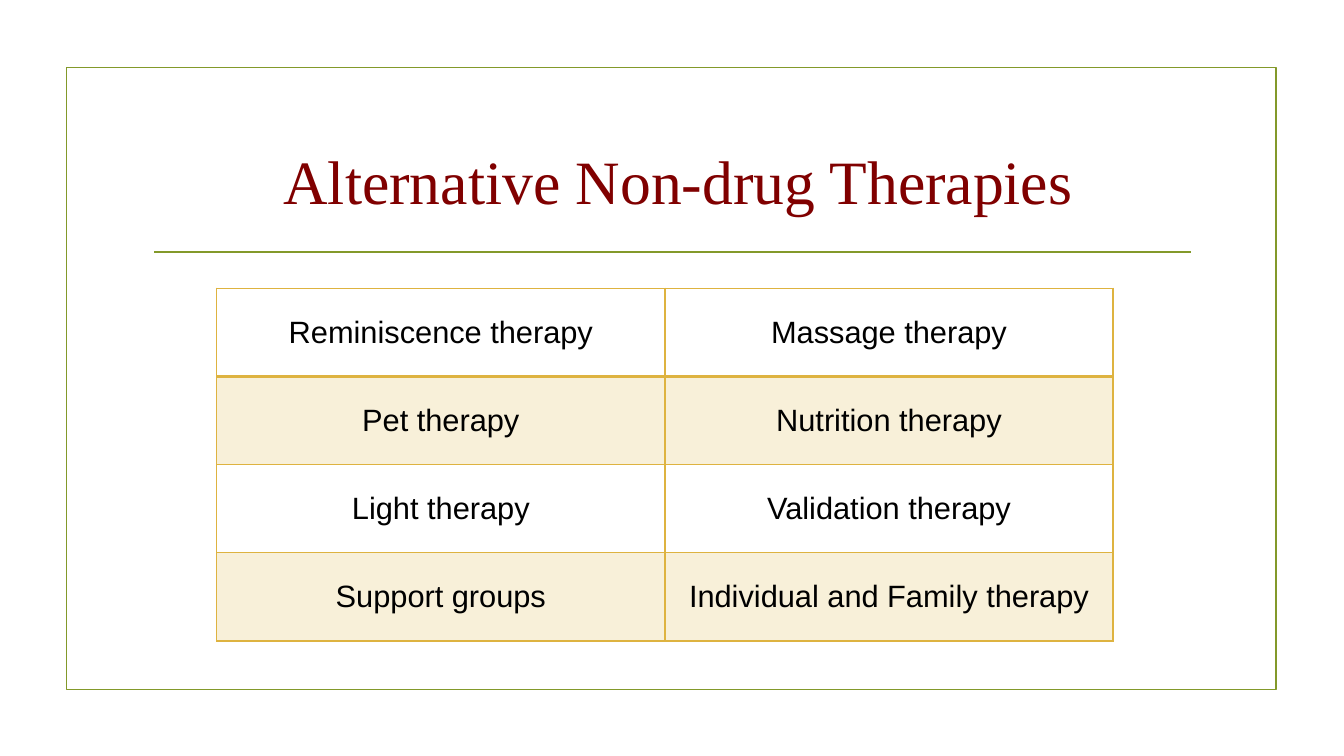
from lxml.etree import SubElement
from pptx import Presentation
from pptx.dml.color import RGBColor
from pptx.enum.shapes import MSO_CONNECTOR, MSO_SHAPE
from pptx.enum.text import MSO_ANCHOR, PP_ALIGN
from pptx.oxml.ns import qn
from pptx.util import Inches, Pt

GREEN = RGBColor(0x83, 0x99, 0x2A)
MAROON = RGBColor(0x80, 0x00, 0x00)
GOLD = RGBColor(0xDE, 0xB3, 0x40)
CREAM = RGBColor(0xF8, 0xF0, 0xD9)
BLACK = RGBColor(0x00, 0x00, 0x00)

THERAPIES = [
    ("Reminiscence therapy", "Massage therapy"),
    ("Pet therapy", "Nutrition therapy"),
    ("Light therapy", "Validation therapy"),
    ("Support groups", "Individual and Family therapy"),
]


def format_text(text_frame, text, font_name, size, color):
    text_frame.text = text
    paragraph = text_frame.paragraphs[0]
    paragraph.alignment = PP_ALIGN.CENTER
    font = paragraph.runs[0].font
    font.name = font_name
    font.size = Pt(size)
    font.color.rgb = color


def add_frame(slide, box):
    frame = slide.shapes.add_shape(MSO_SHAPE.RECTANGLE, *box)
    frame.shadow.inherit = False
    frame.fill.background()
    frame.line.color.rgb = GREEN
    frame.line.width = Pt(1.25)


def add_heading(slide, box, text):
    left, top, width, height = box
    title = slide.shapes.title
    title.left, title.top, title.width, title.height = box
    title.text_frame.word_wrap = True
    title.text_frame.vertical_anchor = MSO_ANCHOR.MIDDLE
    format_text(title.text_frame, text, "Times New Roman", 44, MAROON)

    inset = Inches(0.11)
    bottom = top + height
    rule = slide.shapes.add_connector(
        MSO_CONNECTOR.STRAIGHT, left + inset, bottom, left + width - inset, bottom
    )
    rule.line.color.rgb = GREEN
    rule.line.width = Pt(1.25)
    SubElement(rule._element.spPr, qn("a:effectLst"))


def set_borders(cell, widths):
    properties = cell._tc.get_or_add_tcPr()
    for side, width in widths.items():
        border = SubElement(properties, qn(f"a:ln{side}"), w=str(Pt(width)))
        fill = SubElement(border, qn("a:solidFill"))
        SubElement(fill, qn("a:srgbClr"), val=str(GOLD))


def add_therapy_table(slide, box, rows):
    left, top, width, height = box
    column_count = len(rows[0])
    table = slide.shapes.add_table(len(rows), column_count, *box).table
    table.first_row = False
    table.horz_banding = False
    for column in table.columns:
        column.width = width // column_count
    for row_index, names in enumerate(rows):
        table.rows[row_index].height = height // len(rows)
        top_width = 2 if row_index == 1 else 1
        bottom_width = 2 if row_index == 0 else 1
        for column_index, name in enumerate(names):
            cell = table.cell(row_index, column_index)
            cell.vertical_anchor = MSO_ANCHOR.MIDDLE
            format_text(cell.text_frame, name, "Arial", 22, BLACK)
            set_borders(cell, {"L": 1, "R": 1, "T": top_width, "B": bottom_width})
            if row_index % 2:
                cell.fill.solid()
                cell.fill.fore_color.rgb = CREAM
            else:
                cell.fill.background()


def inch_box(*lengths):
    return [Inches(length) for length in lengths]


def main():
    presentation = Presentation()
    presentation.slide_width = Inches(13.33)
    presentation.slide_height = Inches(7.5)
    slide = presentation.slides.add_slide(presentation.slide_layouts[5])
    add_frame(slide, inch_box(0.66, 0.67, 12, 6.17))
    add_heading(slide, inch_box(1.42, 1.07, 10.5, 1.43), " Alternative Non-drug Therapies")
    add_therapy_table(slide, inch_box(2.15, 2.86, 8.89, 3.5), THERAPIES)
    presentation.save("out.pptx")


if __name__ == "__main__":
    main()
